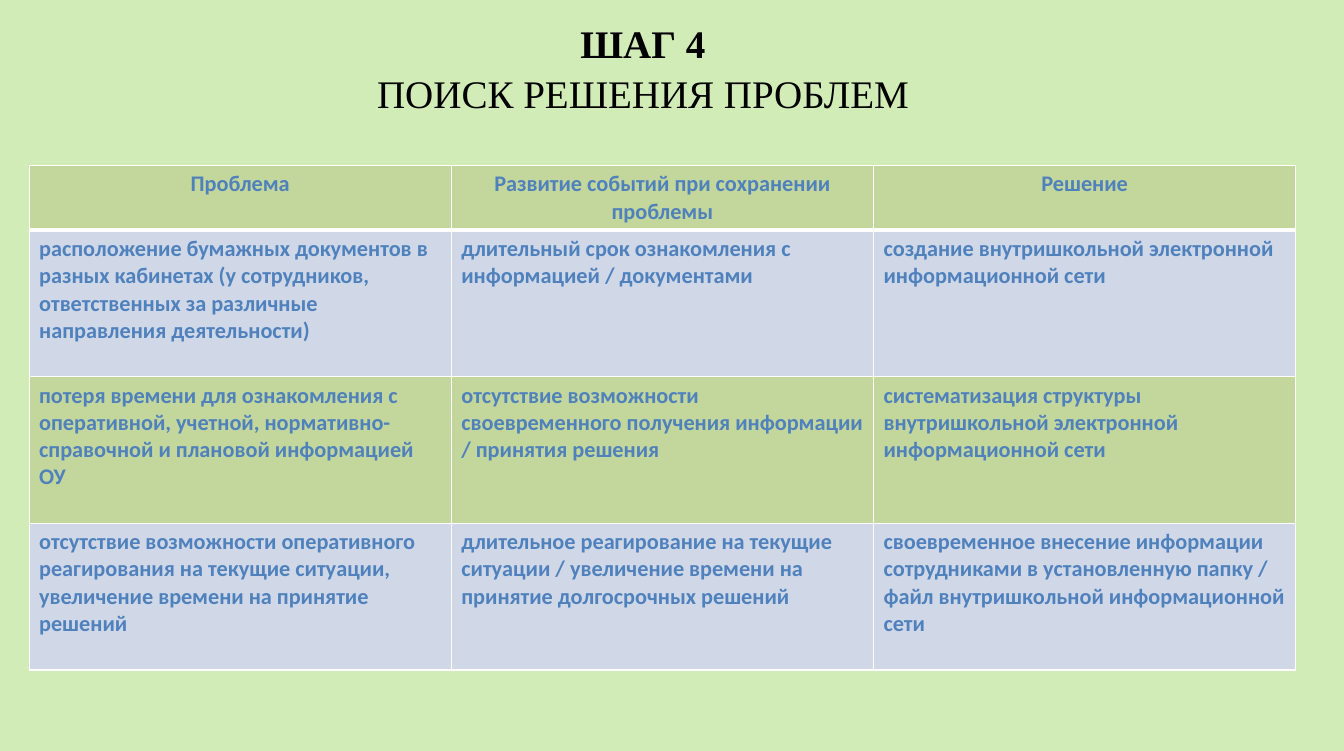
from dataclasses import dataclass

from lxml.etree import SubElement
from pptx import Presentation
from pptx.dml.color import RGBColor as RGB
from pptx.enum.text import MSO_ANCHOR as Anchor, PP_ALIGN as Align
from pptx.oxml.ns import qn
from pptx.util import Inches, Pt


@dataclass(frozen=True)
class Theme:
    background: str = "D2ECB7"
    green: str = "C3D69B"
    blue: str = "D0D8E8"
    cell_text: str = "4F81BD"
    title_text: str = "000000"
    border: str = "FFFFFF"
    title_font: str = "Times New Roman"
    cell_font: str = "Calibri"
    title_size: int = 28
    cell_size: int = 16
    thin: int = 1
    thick: int = 3


class SlideBuilder:
    def __init__(self, prs, theme):
        self.theme = theme
        self.s = prs.slides.add_slide(prs.slide_layouts[6])
        fill = self.s.background.fill
        fill.solid()
        fill.fore_color.rgb = RGB.from_string(theme.background)

    def style(self, font, name, size, color, bold):
        font.name = name
        font.size = Pt(size)
        font.bold = bold
        font.color.rgb = RGB.from_string(color)

    def title(self, heading, subject, left, top, width, height):
        t = self.theme
        sp = self.s.shapes.add_textbox(Inches(left), Inches(top), Inches(width), Inches(height))
        tf = sp.text_frame
        tf.word_wrap = True
        tf.vertical_anchor = Anchor.MIDDLE
        tf.margin_left = tf.margin_right = Inches(0.13)
        tf.margin_top = tf.margin_bottom = Inches(0.07)
        p = tf.paragraphs[0]
        p.text = f"{heading}\v{subject}"
        p.alignment = Align.CENTER
        p.line_spacing = 1.05
        for r, bold in zip(p.runs, (True, False)):
            self.style(r.font, t.title_font, t.title_size, t.title_text, bold)

    def borders(self, cell, top, bottom):
        t = self.theme
        tc_pr = cell._tc.get_or_add_tcPr()
        widths = {"a:lnL": t.thin, "a:lnR": t.thin, "a:lnT": top, "a:lnB": bottom}
        for tag, width in widths.items():
            ln = SubElement(tc_pr, qn(tag), w=str(Pt(width)))
            fill = SubElement(ln, qn("a:solidFill"))
            SubElement(fill, qn("a:srgbClr"), val=t.border)

    def table(self, rows, heights, left, top, width):
        t = self.theme
        columns = len(rows[0])
        frame = self.s.shapes.add_table(len(rows), columns, Inches(left), Inches(top),
                                        Inches(width), Inches(sum(heights)))
        table = frame.table
        table.horz_banding = False
        for i, (row, height) in enumerate(zip(rows, heights)):
            table.rows[i].height = Inches(height)
            for j, text in enumerate(row):
                cell = table.cell(i, j)
                self.borders(cell, t.thick if i == 1 else t.thin, t.thick if i == 0 else t.thin)
                cell.fill.solid()
                cell.fill.fore_color.rgb = RGB.from_string(t.blue if i % 2 else t.green)
                cell.text_frame.text = text
                p = cell.text_frame.paragraphs[0]
                p.alignment = Align.LEFT if i else Align.CENTER
                self.style(p.runs[0].font, t.cell_font, t.cell_size, t.cell_text, True)


ROWS = [
    ("Проблема", "Развитие событий при сохранении проблемы", "Решение"),
    ("расположение бумажных документов в разных кабинетах (у сотрудников, "
     "ответственных за различные направления деятельности)",
     "длительный срок ознакомления с информацией / документами",
     "создание внутришкольной электронной информационной сети"),
    ("потеря времени для ознакомления с оперативной, учетной, "
     "нормативно-справочной и плановой информацией ОУ",
     "отсутствие возможности своевременного получения информации / принятия решения",
     "систематизация структуры внутришкольной электронной информационной сети"),
    ("отсутствие возможности оперативного реагирования на текущие ситуации, "
     "увеличение времени на принятие решений",
     "длительное реагирование на текущие ситуации / увеличение времени на "
     "принятие долгосрочных решений",
     "своевременное внесение информации сотрудниками в установленную папку / "
     "файл внутришкольной информационной сети"),
]


def main():
    prs = Presentation()
    prs.slide_width = Inches(13.39)
    prs.slide_height = Inches(7.48)
    builder = SlideBuilder(prs, Theme())
    builder.table(ROWS, [0.64] + [1.46] * 3, 0.29, 1.65, 12.62)
    builder.title("ШАГ 4", "ПОИСК РЕШЕНИЯ ПРОБЛЕМ", 0.38, 0.04, 12.05, 1.25)
    prs.save("out.pptx")


if __name__ == "__main__":
    main()
